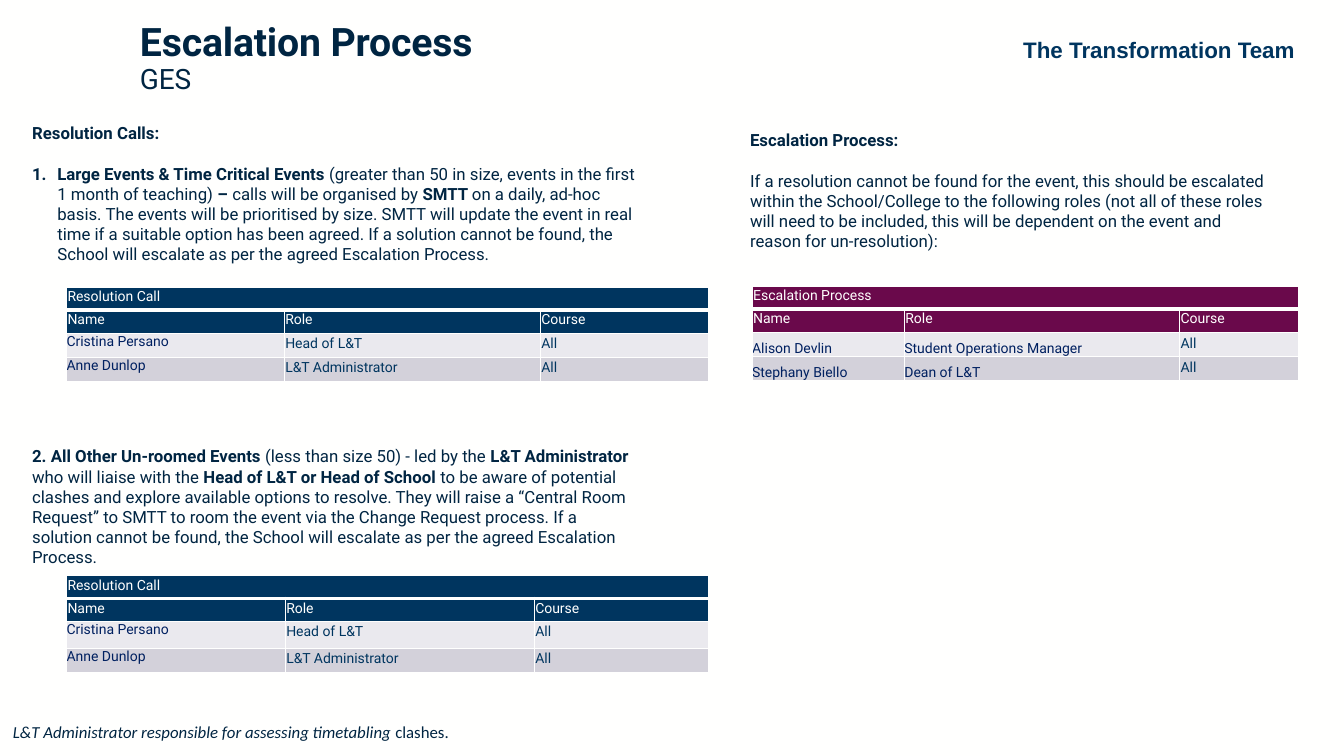
from pptx import Presentation
from pptx.dml.color import RGBColor
from pptx.enum.text import MSO_ANCHOR, PP_ALIGN
from pptx.oxml.ns import qn
from pptx.util import Inches, Pt
from lxml import etree

TOP, MIDDLE, BOTTOM = MSO_ANCHOR.TOP, MSO_ANCHOR.MIDDLE, MSO_ANCHOR.BOTTOM
LEFT, CENTER = PP_ALIGN.LEFT, PP_ALIGN.CENTER

PAPER = RGBColor(0xFF, 0xFF, 0xFE)
INK = RGBColor(0x00, 0x25, 0x42)
NAVY = RGBColor(0x00, 0x35, 0x5F)
BLUE = RGBColor(0x00, 0x20, 0x60)
PLUM = RGBColor(0x6A, 0x09, 0x4B)
BANDS = (RGBColor(0xEA, 0xE9, 0xEE), RGBColor(0xD3, 0xD1, 0xDA))

HEADINGS = ("Name", "Role", "Course")
RESOLUTION_ROLES = [
    ("Cristina Persano", "Head of L&T", "All"),
    ("Anne Dunlop", "L&T Administrator", "All"),
]
ESCALATION_ROLES = [
    ("Alison Devlin", "Student Operations Manager", "All"),
    ("Stephany Biello", "Dean of L&T", "All"),
]


class SlideBuilder:
    def __init__(self, slide, font="Roboto", size=12, color=INK):
        self.slide = slide
        self.font = font
        self.size = size
        self.color = color
        slide.background.fill.solid()
        slide.background.fill.fore_color.rgb = PAPER

    def span(self, para, text, bold=False, italic=False, size=None, color=None, font=None):
        span = para.add_run()
        span.text = text
        span.font.name = font or self.font
        span.font.size = Pt(size or self.size)
        span.font.color.rgb = color or self.color
        span.font.bold = bold
        span.font.italic = italic
        return span

    def text_box(self, left, top, width, height, anchor=TOP):
        box = self.slide.shapes.add_textbox(
            Inches(left), Inches(top), Inches(width), Inches(height))
        box.text_frame.word_wrap = True
        box.text_frame.vertical_anchor = anchor
        return box.text_frame

    def mixed(self, para, *pieces):
        """Add pieces that alternate between bold and regular, bold first."""
        for index, piece in enumerate(pieces):
            self.span(para, piece, bold=index % 2 == 0)

    def paragraph(self, frame, space_before):
        para = frame.add_paragraph()
        para.space_before = Pt(space_before)
        return para

    def number(self, para):
        """Turn a paragraph into a numbered item with a hanging indent."""
        props = para._p.get_or_add_pPr()
        props.set("marL", str(Inches(0.25)))
        props.set("indent", str(Inches(-0.25)))
        etree.SubElement(props, qn("a:buFont"), typeface="+mj-lt")
        etree.SubElement(props, qn("a:buAutoNum"), type="arabicPeriod")

    def borders(self, cell, top, bottom):
        props = cell._tc.get_or_add_tcPr()
        for side, points in (("L", 1), ("R", 1), ("T", top), ("B", bottom)):
            line = etree.SubElement(props, qn(f"a:ln{side}"), w=str(Pt(points)))
            fill = etree.SubElement(line, qn("a:solidFill"))
            etree.SubElement(fill, qn("a:srgbClr"), val=str(PAPER))

    def cell(self, cell, text, fill, color, anchor, padded=True, spaced=False):
        cell.fill.solid()
        cell.fill.fore_color.rgb = fill
        cell.vertical_anchor = anchor
        cell.margin_left = cell.margin_right = cell.margin_top = Inches(0.01 if padded else 0)
        cell.margin_bottom = Inches(0.05 if padded else 0)
        para = cell.text_frame.paragraphs[0]
        if spaced:
            para.line_spacing = 1.07
            para.space_after = Pt(8)
        self.span(para, text, size=10, color=color)

    def role_table(self, left, top, columns, rows, title, roles, accent,
                   tight_columns=1, anchor=TOP):
        """Add a titled table; the first tight_columns have no cell margins."""
        table = self.slide.shapes.add_table(
            len(rows), len(columns), Inches(left), Inches(top),
            Inches(sum(columns)), Inches(sum(rows))).table
        table.first_row = table.horz_banding = False
        for column, width in zip(table.columns, columns):
            column.width = Inches(width)
        for row, height in zip(table.rows, rows):
            row.height = Inches(height)
        table.cell(0, 0).merge(table.cell(0, len(columns) - 1))

        for r, texts in enumerate([(title, "", ""), HEADINGS, *roles]):
            for c, text in enumerate(texts):
                cell = table.cell(r, c)
                self.borders(cell, 3 if r == 1 else 1, 3 if r == 0 else 1)
                if r < 2:
                    self.cell(cell, text, accent, PAPER, BOTTOM)
                else:
                    tight = c < tight_columns
                    self.cell(cell, text, BANDS[r - 2], BLUE if tight else NAVY,
                              anchor, padded=not tight, spaced=not tight)


def main():
    deck = Presentation()
    deck.slide_width, deck.slide_height = Inches(13.33), Inches(7.5)
    page = SlideBuilder(deck.slides.add_slide(deck.slide_layouts[6]))

    team = page.text_box(9.95, 0.31, 3.09, 0.37).paragraphs[0]
    team.alignment = CENTER
    page.span(team, "The Transformation Team", bold=True, size=16, color=NAVY, font="Arial")

    title = page.text_box(1.29, 0, 4.23, 1.17, MIDDLE).paragraphs[0]
    title.alignment = LEFT
    title.line_spacing = 0.9
    heading = page.span(title, "Escalation Process", bold=True, size=28)
    heading.font._element.set("spc", "-10")
    title.add_line_break()
    subtitle = page.span(title, "GES", size=20)
    subtitle.font._element.set("spc", "-10")

    calls = page.text_box(0.22, 1.17, 6.19, 4.34)
    page.mixed(calls.paragraphs[0], "Resolution Calls:")
    large_events = page.paragraph(calls, 14.5)
    page.number(large_events)
    page.mixed(
        large_events,
        "Large Events & Time Critical Events ",
        "(greater than 50 in size, events in the first 1 month of teaching) ",
        "– ",
        "calls will be organised by ",
        "SMTT ",
        "on a daily, ad-hoc basis. The events will be prioritised by size. SMTT will update "
        "the event in real time if a suitable option has been agreed. If a solution cannot "
        "be found, the School will escalate as per the agreed Escalation Process.")
    page.mixed(
        page.paragraph(calls, 130),
        "2. All Other Un-roomed Events ",
        "(less than size 50) - led by the ",
        "L&T Administrator ",
        "who will liaise with the ",
        "Head of L&T or Head of School ",
        "to be aware of potential clashes and explore available options to resolve. They will "
        "raise a “Central Room Request” to SMTT to room the event via the Change Request "
        "process. If a solution cannot be found, the School will escalate as per the agreed "
        "Escalation Process.")

    escalation = page.text_box(7.34, 1.24, 5.42, 1.51)
    page.mixed(escalation.paragraphs[0], "Escalation Process:")
    page.span(
        page.paragraph(escalation, 14.5),
        "If a resolution cannot be found for the event, this should be escalated within the "
        "School/College to the following roles (not all of these roles will need to be "
        "included, this will be dependent on the event and reason for un-resolution):")

    page.role_table(0.66, 2.85, (2.16, 2.54, 1.67), (0.22, 0.23, 0.24, 0.23),
                    "Resolution Call", RESOLUTION_ROLES, NAVY)
    page.role_table(0.66, 5.71, (2.17, 2.47, 1.73), (0.22, 0.23, 0.27, 0.23),
                    "Resolution Call", RESOLUTION_ROLES, NAVY)
    page.role_table(7.46, 2.84, (1.51, 2.73, 1.18), (0.22, 0.23, 0.24, 0.23),
                    "Escalation Process", ESCALATION_ROLES, PLUM,
                    tight_columns=2, anchor=BOTTOM)

    footnote = page.text_box(0.03, 7.11, 8.17, 0.3).paragraphs[0]
    page.span(footnote, "L&T Administrator responsible for assessing timetabling ",
              italic=True, font="Calibri")
    page.span(footnote, "clashes.", font="Calibri")

    deck.save("out.pptx")


if __name__ == "__main__":
    main()
